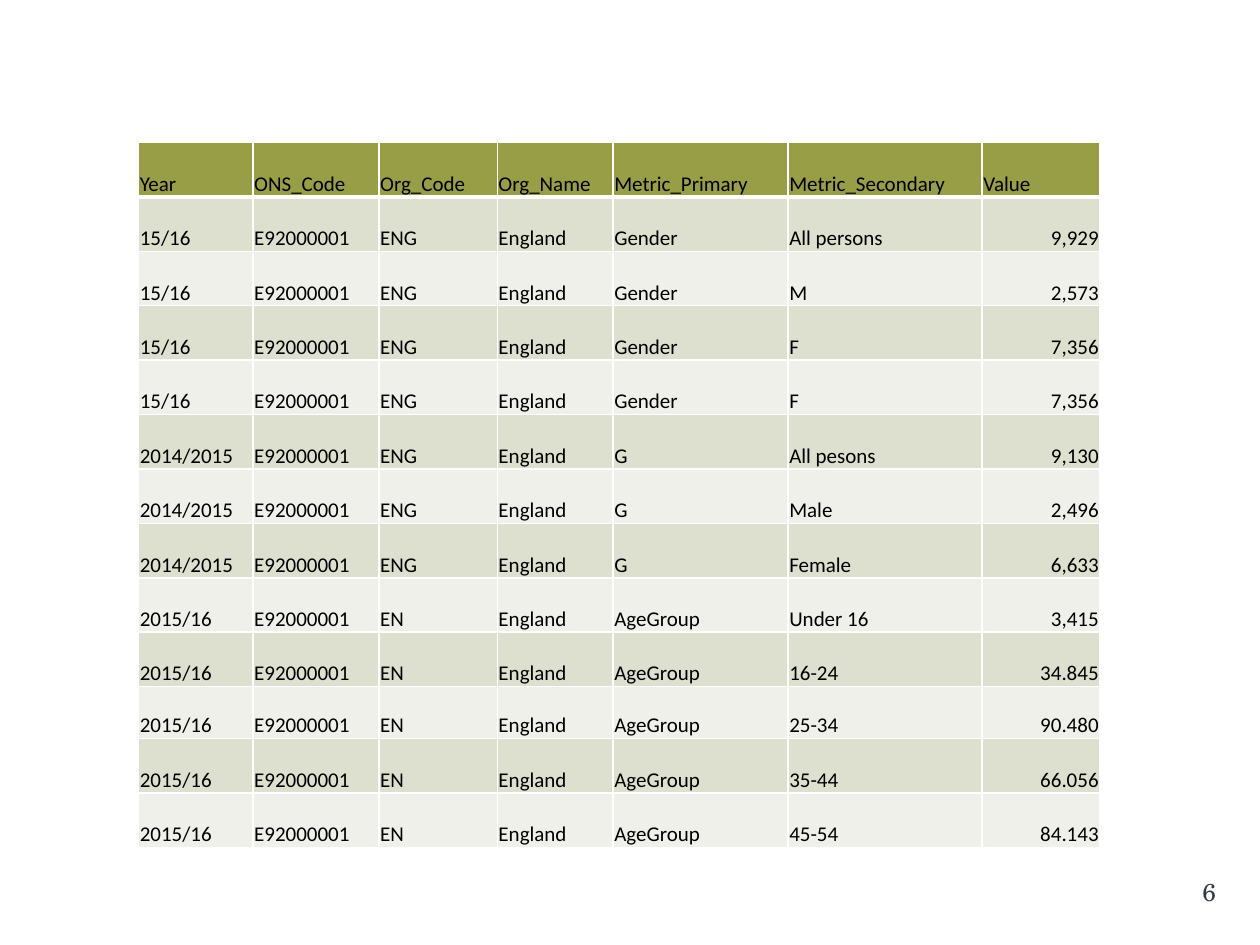
from lxml import etree
from pptx import Presentation
from pptx import util as u
from pptx.dml.color import RGBColor
from pptx.enum import text
from pptx.oxml import ns

Pt = u.Pt
WHITE, HEADER = "FFFFFF", "979E45"
BANDS = ("DDDFCF", "EFF0E9")
COLUMN_WIDTHS = (65.4, 72, 67.6, 66.2, 100, 110.9, 67.3)
ROW_HEIGHT, SHORT_ROW_HEIGHT, SHORT_ROW = 31.1, 29.6, 10

HEADINGS = ("Year", "ONS_Code", "Org_Code", "Org_Name",
            "Metric_Primary", "Metric_Secondary", "Value")
# Year, organisation code, primary metric, then (secondary metric, value) pairs
GROUPS = (
    ("15/16", "ENG", "Gender",
     (("All persons", "9,929"), ("M", "2,573"), ("F", "7,356"), ("F", "7,356"))),
    ("2014/2015", "ENG", "G",
     (("All pesons", "9,130"), ("Male", "2,496"), ("Female", "6,633"))),
    ("2015/16", "EN", "AgeGroup",
     (("Under 16", "3,415"), ("16-24", "34.845"), ("25-34", "90.480"),
      ("35-44", "66.056"), ("45-54", "84.143"))),
)


def color(value):
    return RGBColor.from_string(value)


def apply(target, values):
    for name, value in values.items():
        setattr(target, name, value)


def write(paragraph, content, font, size, font_color, align):
    paragraph.alignment = align
    run = paragraph.add_run()
    run.text = content
    apply(run.font, {"name": font, "size": Pt(size), "bold": False})
    run.font.color.rgb = color(font_color)


def set_borders(cell, widths):
    """Draw white borders; widths holds left, right, top and bottom in points."""
    properties = cell._tc.get_or_add_tcPr()
    for index, (side, width) in enumerate(zip("LRTB", widths)):
        line = etree.Element(ns.qn(f"a:ln{side}"), w=str(Pt(width)))
        fill = etree.SubElement(line, ns.qn("a:solidFill"))
        etree.SubElement(fill, ns.qn("a:srgbClr"), val=WHITE)
        properties.insert(index, line)


def format_cell(cell, content, fill, align, borders):
    apply(cell, {"margin_left": Pt(0.7), "margin_right": Pt(0.7),
                 "margin_top": Pt(0.7), "margin_bottom": Pt(0),
                 "vertical_anchor": text.MSO_ANCHOR.BOTTOM})
    cell.fill.solid()
    cell.fill.fore_color.rgb = color(fill)
    write(cell.text_frame.paragraphs[0], content, "Calibri", 12, "000000", align)
    set_borders(cell, borders)


def table_rows():
    rows = [HEADINGS]
    for year, organisation, primary, entries in GROUPS:
        for secondary, value in entries:
            rows.append((year, "E92000001", organisation, "England",
                         primary, secondary, value))
    return rows


def add_metrics_table(slide):
    rows = table_rows()
    height = ROW_HEIGHT * (len(rows) - 1) + SHORT_ROW_HEIGHT
    table = slide.shapes.add_table(
        len(rows), len(HEADINGS), Pt(79.2), Pt(81.4),
        Pt(sum(COLUMN_WIDTHS)), Pt(height)).table
    for column, width in zip(table.columns, COLUMN_WIDTHS):
        column.width = Pt(width)
    for row_index, values in enumerate(rows):
        is_header = row_index == 0
        table.rows[row_index].height = Pt(
            SHORT_ROW_HEIGHT if row_index == SHORT_ROW else ROW_HEIGHT)
        fill = HEADER if is_header else BANDS[(row_index - 1) % 2]
        borders = (1, 1, 3 if row_index == 1 else 1, 3 if is_header else 1)
        for column_index, content in enumerate(values):
            is_number = not is_header and column_index == len(HEADINGS) - 1
            align = text.PP_ALIGN.RIGHT if is_number else text.PP_ALIGN.LEFT
            format_cell(table.cell(row_index, column_index), content,
                        fill, align, borders)


def add_page_number(slide, number):
    box = slide.shapes.add_textbox(Pt(556.6), Pt(497.5), Pt(138.2), Pt(24.5))
    frame = box.text_frame
    apply(frame, {"word_wrap": True, "margin_left": Pt(7.2), "margin_right": Pt(0),
                  "margin_top": Pt(3.6), "margin_bottom": Pt(3.6)})
    write(frame.paragraphs[0], number, "TeX Gyre Schola", 14, "323D43",
          text.PP_ALIGN.RIGHT)


def main():
    presentation = Presentation()
    apply(presentation, {"slide_width": Pt(720), "slide_height": Pt(540)})
    slide = presentation.slides.add_slide(presentation.slide_layouts[6])
    add_page_number(slide, "6")
    add_metrics_table(slide)
    presentation.save("out.pptx")


if __name__ == "__main__":
    main()
